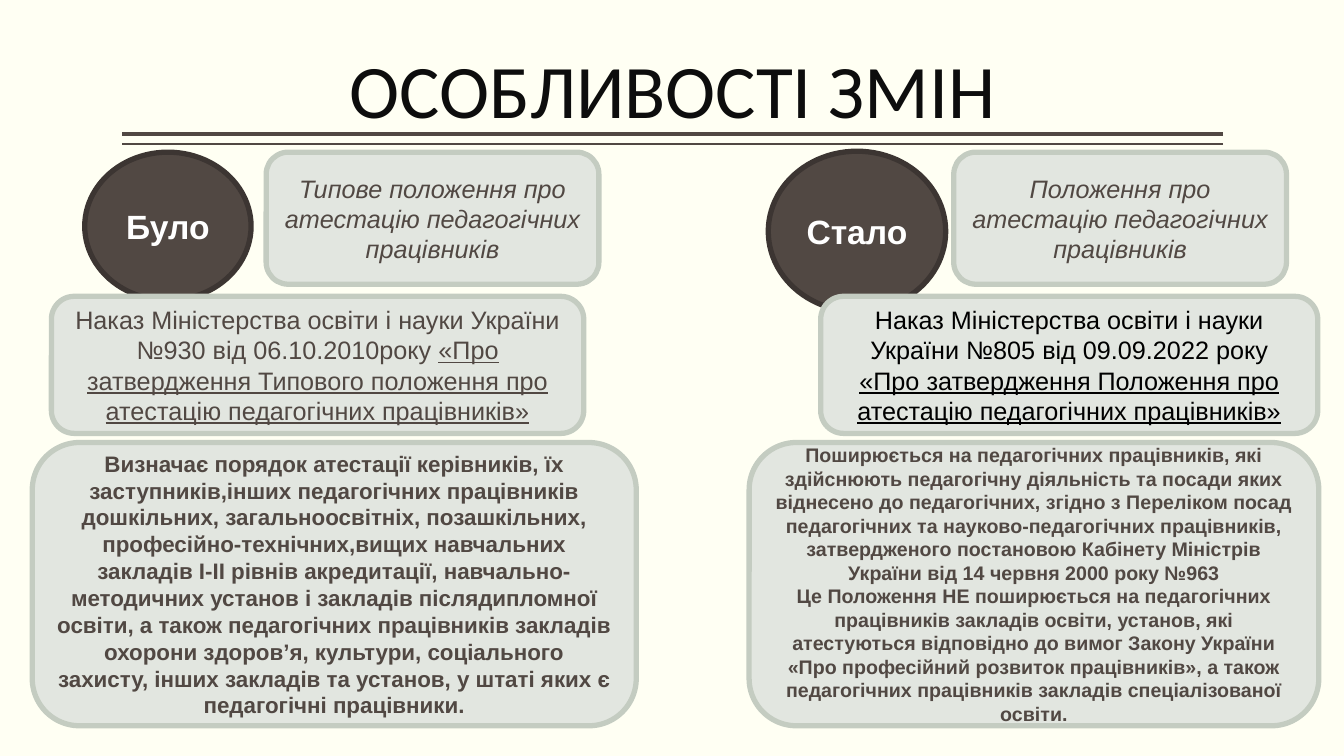
from dataclasses import dataclass

from lxml import etree
from pptx import Presentation
from pptx.dml.color import RGBColor
from pptx.enum.shapes import MSO_CONNECTOR as Connector
from pptx.enum.shapes import MSO_SHAPE as ShapeKind
from pptx.enum.text import MSO_ANCHOR as Anchor
from pptx.enum.text import PP_ALIGN as Align
from pptx.oxml.ns import qn
from pptx.slide import Slide
from pptx.util import Inches, Pt


@dataclass(frozen=True)
class Theme:
    background: RGBColor = RGBColor.from_string("FFFFF3")
    title: RGBColor = RGBColor.from_string("0D0D0D")
    brown: RGBColor = RGBColor.from_string("514843")
    dark_brown: RGBColor = RGBColor.from_string("3C3532")
    panel: RGBColor = RGBColor.from_string("E2E6E0")
    panel_edge: RGBColor = RGBColor.from_string("C4CCC1")
    white: RGBColor = RGBColor.from_string("FFFFFF")
    black: RGBColor = RGBColor.from_string("000000")
    title_font: str = "Calibri"
    body_font: str = "Arial"
    title_size: int = 54
    badge_size: int = 24
    body_size: int = 18
    scope_size: int = 16
    small_size: int = 14
    edge_width: float = 3.78


THEME = Theme()


@dataclass(frozen=True)
class Box:
    left: float
    top: float
    width: float
    height: float
    paragraphs: tuple[str, ...]
    size: int = THEME.body_size
    color: RGBColor = THEME.brown
    bold: bool = False
    italic: bool = False
    underlined: str = ""
    kind: ShapeKind = ShapeKind.ROUNDED_RECTANGLE
    fill: RGBColor = THEME.panel
    edge: RGBColor = THEME.panel_edge


def badge(left: float, top: float, width: float, height: float, label: str) -> Box:
    return Box(left, top, width, height, (label,), THEME.badge_size, THEME.white, bold=True,
               kind=ShapeKind.OVAL, fill=THEME.brown, edge=THEME.dark_brown)


def order(left: float, width: float, text: str, document: str, color: RGBColor) -> Box:
    return Box(left, 2.94, width, 1.36, (text,), color=color, underlined=document)


def regulation(left: float, text: str) -> Box:
    return Box(left, 1.51, 3.3, 1.31, (text,), italic=True)


def scope(left: float, width: float, size: int, *paragraphs: str) -> Box:
    return Box(left, 4.39, width, 2.81, paragraphs, size, bold=True)


BOXES = (
    badge(0.84, 1.51, 1.65, 1.47, "Було"),
    badge(7.62, 1.5, 1.76, 1.59, "Стало"),
    order(0.51, 5.28, "Наказ Міністерства освіти і науки України №930 від 06.10.2010року ",
          "«Про затвердження Типового положення про атестацію педагогічних працівників»",
          THEME.brown),
    order(8.14, 4.93, "Наказ Міністерства освіти і науки України №805 від 09.09.2022 року ",
          "«Про затвердження Положення про атестацію педагогічних працівників»",
          THEME.black),
    regulation(2.64, "Типове положення про атестацію педагогічних працівників"),
    regulation(9.46, "Положення про атестацію педагогічних працівників"),
    scope(0.32, 5.99, THEME.scope_size,
          "Визначає порядок атестації керівників, їх заступників,інших педагогічних працівників "
          "дошкільних, загальноосвітніх, позашкільних, професійно-технічних,вищих навчальних "
          "закладів I-II рівнів акредитації, навчально-методичних установ і закладів "
          "післядипломної освіти, а також педагогічних працівників закладів охорони здоров’я, "
          "культури, соціального захисту, інших закладів та установ, у штаті яких є "
          "педагогічні працівники."),
    scope(7.43, 5.65, THEME.small_size,
          "Поширюється на педагогічних працівників, які здійснюють педагогічну діяльність та "
          "посади яких віднесено до педагогічних, згідно з Переліком посад педагогічних та "
          "науково-педагогічних працівників, затвердженого постановою Кабінету Міністрів "
          "України від 14 червня 2000 року №963",
          "Це Положення НЕ поширюється на педагогічних працівників закладів освіти, установ, "
          "які атестуються відповідно до вимог Закону України «Про професійний розвиток "
          "працівників», а також педагогічних працівників закладів спеціалізованої освіти."),
)


def add_title(slide: Slide, text: str) -> None:
    title = slide.shapes.title
    title.left, title.top = Inches(1.21), Inches(0.35)
    title.width, title.height = Inches(10.92), Inches(1.04)
    frame = title.text_frame
    frame.text = text
    frame.vertical_anchor = Anchor.BOTTOM
    frame.margin_left = frame.margin_right = 0
    paragraph = frame.paragraphs[0]
    paragraph.alignment = Align.CENTER
    paragraph.line_spacing = 0.9
    font = paragraph.font
    font.name, font.size = THEME.title_font, Pt(THEME.title_size)
    font.color.rgb = THEME.title


def add_rule(slide: Slide, top: float, width: float) -> None:
    rule = slide.shapes.add_connector(
        Connector.STRAIGHT, Inches(12.13), Inches(top), Inches(1.21), Inches(top))
    rule.line.color.rgb = THEME.brown
    rule.line.width = Pt(width)
    etree.SubElement(rule.element.spPr, qn("a:effectLst"))


def add_box(slide: Slide, box: Box) -> None:
    shape = slide.shapes.add_shape(
        box.kind, Inches(box.left), Inches(box.top), Inches(box.width), Inches(box.height))
    shape.shadow.inherit = False
    shape.fill.solid()
    shape.fill.fore_color.rgb = box.fill
    shape.line.color.rgb = box.edge
    shape.line.width = Pt(THEME.edge_width)
    frame = shape.text_frame
    frame.word_wrap = True
    frame.vertical_anchor = Anchor.MIDDLE
    frame.text = "\n".join(box.paragraphs)
    for paragraph in frame.paragraphs:
        paragraph.alignment = Align.CENTER
        font = paragraph.font
        font.name, font.size = THEME.body_font, Pt(box.size)
        font.bold, font.italic = box.bold, box.italic
        font.color.rgb = box.color
    if box.underlined:
        run = frame.paragraphs[-1].add_run()
        run.text = box.underlined
        run.font.underline = True


def main() -> None:
    presentation = Presentation()
    presentation.slide_width, presentation.slide_height = Inches(13.33), Inches(7.5)
    slide = presentation.slides.add_slide(presentation.slide_layouts[5])
    slide.background.fill.solid()
    slide.background.fill.fore_color.rgb = THEME.background
    add_rule(slide, 1.33, 3)
    add_rule(slide, 1.43, 1)
    add_title(slide, "ОСОБЛИВОСТІ ЗМІН")
    for box in BOXES:
        add_box(slide, box)
    presentation.save("out.pptx")


if __name__ == "__main__":
    main()
